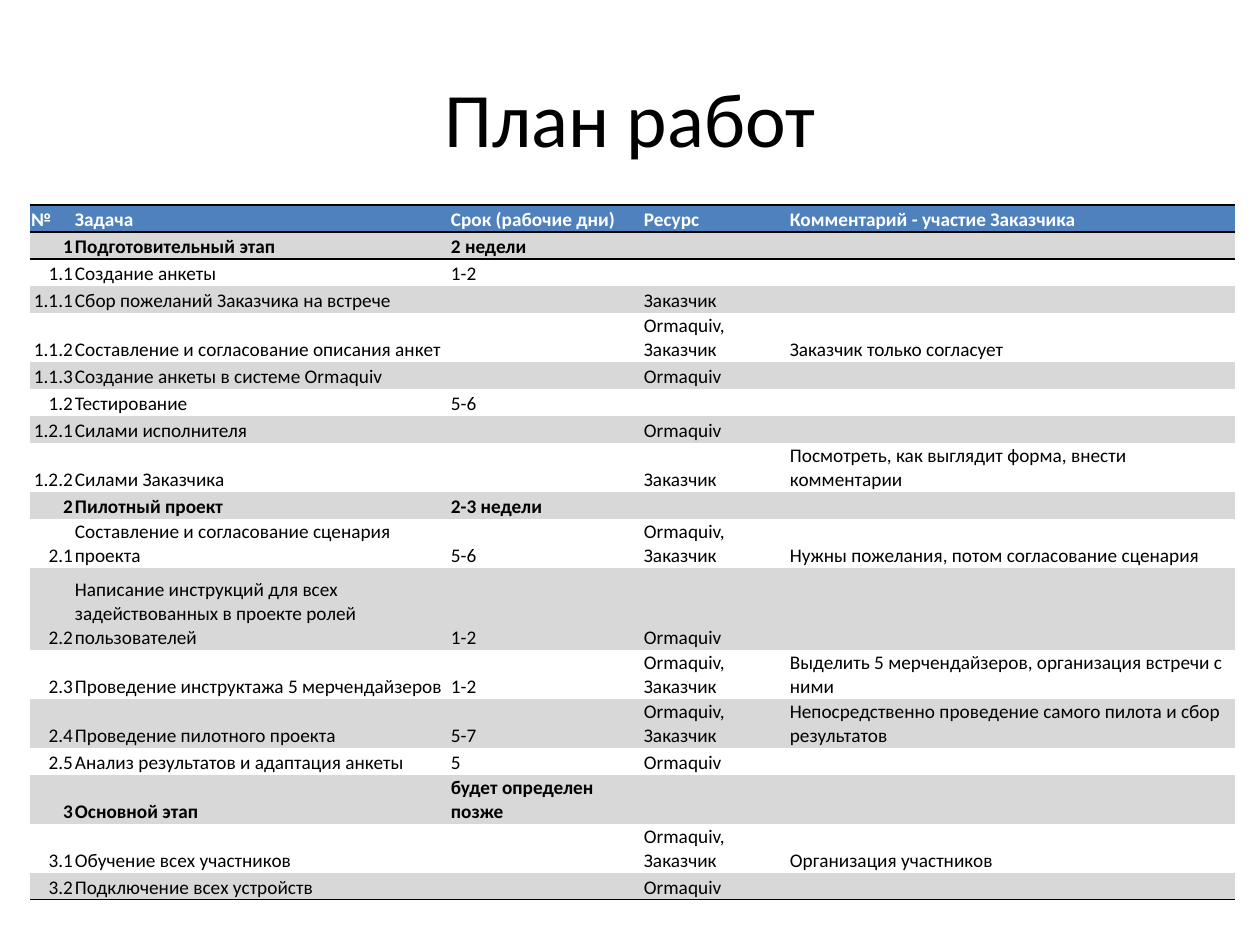
from lxml import etree
from pptx import Presentation
from pptx.dml.color import RGBColor
from pptx.enum.text import MSO_ANCHOR, PP_ALIGN
from pptx.oxml.ns import qn
from pptx.util import Emu, Pt

PX = 914400 // 126
LEFT, CENTER, RIGHT = PP_ALIGN.LEFT, PP_ALIGN.CENTER, PP_ALIGN.RIGHT
MIDDLE, BOTTOM = MSO_ANCHOR.MIDDLE, MSO_ANCHOR.BOTTOM
NO_STYLE = "{2D5ABB26-0587-4C30-8999-92F81FD0307C}"
BLACK, WHITE, BLUE, GREY = "000000", "FFFFFF", "4F81BD", "D8D8D8"
FONT = "Calibri"
TABLE_SIZE = 11
COLUMN_WIDTHS = [44, 376, 193, 146, 446]
LINE_HEIGHTS = {1: 27, 2: 49, 3: 82}

PLAN = [
    (1, "№", "Задача", "Срок (рабочие дни)", "Ресурс", "Комментарий - участие Заказчика"),
    (1, "1", "Подготовительный этап", "2 недели", "", ""),
    (1, "1.1", "Создание анкеты", "1-2", "", ""),
    (1, "1.1.1", "Сбор пожеланий Заказчика на встрече", "", "Заказчик", ""),
    (2, "1.1.2", "Составление и согласование описания анкет", "",
     "Ormaquiv, Заказчик", "Заказчик только согласует"),
    (1, "1.1.3", "Создание анкеты в системе Ormaquiv", "", "Ormaquiv", ""),
    (1, "1.2", "Тестирование", "5-6", "", ""),
    (1, "1.2.1", "Силами исполнителя", "", "Ormaquiv", ""),
    (2, "1.2.2", "Силами Заказчика", "", "Заказчик",
     "Посмотреть, как выглядит форма, внести комментарии"),
    (1, "2", "Пилотный проект", "2-3 недели", "", ""),
    (2, "2.1", "Составление и согласование сценария проекта", "5-6",
     "Ormaquiv, Заказчик", "Нужны пожелания, потом согласование сценария"),
    (3, "2.2", "Написание инструкций для всех задействованных в проекте ролей пользователей",
     "1-2", "Ormaquiv", ""),
    (2, "2.3", "Проведение инструктажа 5 мерчендайзеров", "1-2",
     "Ormaquiv, Заказчик", "Выделить 5 мерчендайзеров, организация встречи с ними"),
    (2, "2.4", "Проведение пилотного проекта", "5-7",
     "Ormaquiv, Заказчик", "Непосредственно проведение самого пилота и сбор результатов"),
    (1, "2.5", "Анализ результатов и адаптация анкеты", "5", "Ormaquiv", ""),
    (2, "3", "Основной этап", "будет определен позже", "", ""),
    (2, "3.1", "Обучение всех участников", "", "Ormaquiv, Заказчик", "Организация участников"),
    (1, "3.2", "Подключение всех устройств", "", "Ormaquiv", ""),
]


def px(length):
    """Turn pixels into EMU."""
    return Emu(length * PX)


def color(value):
    """Turn a hex string into a colour."""
    return RGBColor.from_string(value)


def write_text(frame, text, *, size, fill=BLACK, bold=False, align=LEFT):
    """Write one formatted paragraph; an empty one only keeps its size."""
    paragraph = frame.paragraphs[0]
    paragraph.alignment = align
    if not text:
        etree.SubElement(paragraph._p, qn("a:endParaRPr"), sz=str(size * 100))
        return
    run = paragraph.add_run()
    run.text = text
    run.font.name = FONT
    run.font.size = Pt(size)
    run.font.bold = bold
    run.font.color.rgb = color(fill)


def add_border(cell, edge):
    """Draw a thin black line along one edge of a cell."""
    line = etree.SubElement(cell._tc.get_or_add_tcPr(), qn(f"a:ln{edge}"), w=str(Pt(1)))
    solid = etree.SubElement(line, qn("a:solidFill"))
    etree.SubElement(solid, qn("a:srgbClr"), val=BLACK)


def add_title(slide, left, top, width, height):
    """Place the centred slide title."""
    shape = slide.shapes.add_textbox(px(left), px(top), px(width), px(height))
    frame = shape.text_frame
    frame.word_wrap = True
    frame.vertical_anchor = MIDDLE
    write_text(frame, "План работ", size=44, align=CENTER)


def format_cell(cell, text, row, column):
    """Fill one cell by its place in the plan."""
    header = row == 0
    stage = PLAN[row][1].isdigit()
    cell.margin_left = cell.margin_right = cell.margin_top = px(1)
    cell.margin_bottom = 0
    cell.vertical_anchor = BOTTOM
    write_text(cell.text_frame, text, size=TABLE_SIZE, bold=header or stage,
               fill=WHITE if header else BLACK,
               align=RIGHT if column == 0 and not header else LEFT)
    if row <= 1:
        add_border(cell, "T")
    if row in (0, len(PLAN) - 1):
        add_border(cell, "B")
    if header or row % 2:
        cell.fill.solid()
        cell.fill.fore_color.rgb = color(BLUE if header else GREY)
    else:
        cell.fill.background()


def add_plan(slide, left, top):
    """Place the work plan table."""
    heights = [LINE_HEIGHTS[lines] for lines, *_ in PLAN]
    table = slide.shapes.add_table(
        len(PLAN), len(COLUMN_WIDTHS), px(left), px(top),
        px(sum(COLUMN_WIDTHS)), px(sum(heights))).table
    table.first_row = table.horz_banding = False
    table._tbl.tblPr.find(qn("a:tableStyleId")).text = NO_STYLE
    for column, width in zip(table.columns, COLUMN_WIDTHS):
        column.width = px(width)
    for row, (_, *texts) in enumerate(PLAN):
        table.rows[row].height = px(heights[row])
        for column, text in enumerate(texts):
            format_cell(table.cell(row, column), text, row, column)


def main():
    """Build and save the slide."""
    presentation = Presentation()
    presentation.slide_width, presentation.slide_height = px(1260), px(945)
    slide = presentation.slides.add_slide(presentation.slide_layouts[6])
    add_title(slide, 63, 38, 1134, 157)
    add_plan(slide, 30, 205)
    presentation.save("out.pptx")


if __name__ == "__main__":
    main()
